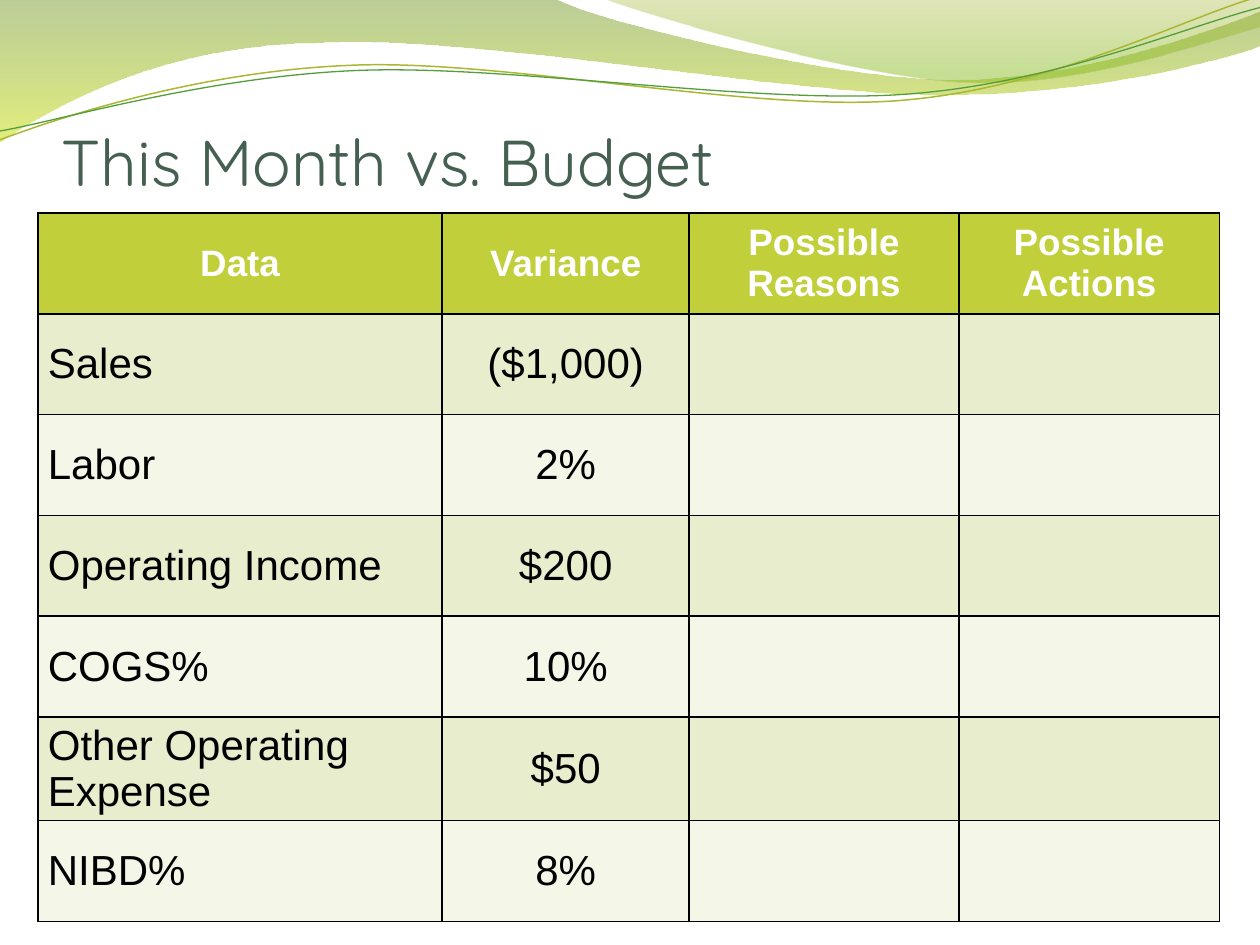
from pptx import Presentation
from pptx.dml.color import RGBColor
from pptx.enum.text import MSO_ANCHOR, MSO_AUTO_SIZE, PP_ALIGN
from pptx.oxml import parse_xml
from pptx.oxml.ns import nsdecls
from pptx.oxml.xmlchemy import OxmlElement
from pptx.util import Inches, Pt

LEFT, CENTER = PP_ALIGN.LEFT, PP_ALIGN.CENTER
MIDDLE, BOTTOM = MSO_ANCHOR.MIDDLE, MSO_ANCHOR.BOTTOM

WHITE = RGBColor(0xFF, 0xFF, 0xFF)
BLACK = RGBColor(0x00, 0x00, 0x00)
TITLE_GREEN = RGBColor(0x45, 0x5F, 0x51)
HEADER_LIME = RGBColor(0xC0, 0xCF, 0x3A)
BANDS = RGBColor(0xE8, 0xED, 0xCE), RGBColor(0xF4, 0xF6, 0xE8)
OLIVE = RGBColor(0x69, 0x92, 0x1C)
YELLOW_GREEN = RGBColor(0xCC, 0xE1, 0x0F)
MOSS = RGBColor(0x9B, 0xAA, 0x1A)
GRASS = RGBColor(0x81, 0xBA, 0x16)
LINE_LIME = RGBColor(0xA9, 0xB7, 0x33)
LINE_GREEN = RGBColor(0x54, 0x9E, 0x39)

TITLE = "This Month vs. Budget"
HEADERS = ["Data", "Variance", "Possible Reasons", "Possible Actions"]
ROWS = [
    ("Sales", "($1,000)"),
    ("Labor", "2%"),
    ("Operating Income", "$200"),
    ("COGS%", "10%"),
    ("Other Operating Expense", "$50"),
    ("NIBD%", "8%"),
]
COLUMN_WIDTHS = [3.21, 1.96, 2.14, 2.07]
ROW_HEIGHT = 0.8

# Outlines in inches: one pair is a straight step, three pairs are a Bezier curve.
# Gradient stops: position, colour, opacity in percent.
BANNERS = [
    ([[(0, -0.01)], [(4.4, -0.01)],
      [(4.75, 0.17), (6.63, 0.63), (7.58, 0.63)],
      [(8.53, 0.63), (9.58, 0.26), (10, 0.09)], [(10.01, 0.36)],
      [(9.83, 0.44), (8.69, 0.76), (7.45, 0.75)],
      [(6.22, 0.75), (3.81, 0.28), (2.57, 0.34)],
      [(1.29, 0.35), (0.45, 0.83), (-0.01, 1.13)], [(0, -0.01)]],
     [(0, OLIVE, 45), (1, YELLOW_GREEN, 55)]),
    ([[(4.79, -0.01)],
      [(5.09, 0.11), (6.82, 0.62), (7.68, 0.65)],
      [(8.55, 0.69), (9.61, 0.32), (10, 0.21)], [(10, 0)], [(4.79, -0.01)]],
     [(0, MOSS, 30), (0.8, GRASS, 45)]),
]
STRANDS = [
    ([[(0, 1.11)],
      [(0.48, 0.93), (1.57, 0.57), (2.76, 0.52)],
      [(3.95, 0.46), (5.92, 0.89), (7.12, 0.8)],
      [(8.33, 0.71), (9.38, 0.15), (9.97, -0.02)]], LINE_LIME, 0.85),
    ([[(0, 1.04)],
      [(0.47, 0.96), (1.63, 0.61), (2.83, 0.56)],
      [(4.02, 0.51), (5.97, 0.83), (7.16, 0.75)],
      [(8.36, 0.67), (9.41, 0.21), (10, 0.06)]], LINE_GREEN, 0.75),
]


def add_outline(page, outline, close):
    """Draw every point as a straight step, then join triples into Bezier curves."""
    points = [(Inches(x), Inches(y)) for step in outline for x, y in step]
    builder = page.shapes.build_freeform(*points[0])
    builder.add_line_segments(points[1:], close=close)
    shape = builder.convert_to_shape()
    shape.shadow.inherit = False
    straight_steps = iter(shape.element.spPr.xpath(".//a:lnTo"))
    for step in outline[1:]:
        parts = [next(straight_steps) for point in step]
        if len(parts) == 3:
            curve = OxmlElement("a:cubicBezTo")
            parts[0].addprevious(curve)
            for part in parts:
                curve.append(part[0])
                part.getparent().remove(part)
    return shape


def add_banner(page, outline, stops):
    shape = add_outline(page, outline, True)
    shape.line.fill.background()
    shape.fill.gradient()
    shape.fill.gradient_angle = 270
    for stop, (position, color, opacity) in zip(shape.fill.gradient_stops, stops):
        stop.position = position
        stop.color.rgb = color
    colors = shape.element.spPr.xpath(".//a:gs/a:srgbClr")
    for element, (position, color, opacity) in zip(colors, stops):
        alpha = OxmlElement("a:alpha")
        alpha.set("val", str(opacity * 1000))
        element.append(alpha)


def add_strand(page, outline, color, width):
    shape = add_outline(page, outline, False)
    shape.fill.background()
    shape.line.color.rgb = color
    shape.line.width = Pt(width)


def style_cell(cell, fill):
    cell.vertical_anchor = MIDDLE
    cell.margin_left = cell.margin_right = Inches(0.08)
    cell.margin_top = cell.margin_bottom = Inches(0.04)
    properties = cell._tc.get_or_add_tcPr()
    for side in ("lnL", "lnR", "lnT", "lnB"):
        properties.append(parse_xml(
            f'<a:{side} {nsdecls("a")} w="{Pt(1)}"><a:solidFill>'
            f'<a:srgbClr val="{BLACK}"/></a:solidFill></a:{side}>'))
    cell.fill.solid()
    cell.fill.fore_color.rgb = fill


def write_cell(cell, text, align, size, color, bold):
    cell.text = text
    para = cell.text_frame.paragraphs[0]
    para.alignment = align
    para.font.name = "Arial"
    para.font.size = Pt(size)
    para.font.bold = bold
    para.font.color.rgb = color


def place_title(page):
    title = page.shapes.title
    title.left, title.top, title.width, title.height = map(Inches, (0.49, 0.64, 9, 0.94))
    frame = title.text_frame
    frame.text = TITLE
    frame.auto_size = MSO_AUTO_SIZE.NONE
    frame.vertical_anchor = BOTTOM
    frame.margin_left = frame.margin_right = frame.margin_bottom = 0
    frame.margin_top = Inches(0.05)
    para = frame.paragraphs[0]
    para.alignment = LEFT
    para.font.name = "Quicksand"
    para.font.size = Pt(37)
    para.font.color.rgb = TITLE_GREEN
    title.element.getparent().append(title.element)  # in front of the waves


def add_budget_table(page):
    row_count = len(ROWS) + 1
    table = page.shapes.add_table(
        row_count, len(HEADERS), Inches(0.3), Inches(1.69),
        Inches(sum(COLUMN_WIDTHS)), Inches(ROW_HEIGHT * row_count)).table
    for column, width in zip(table.columns, COLUMN_WIDTHS):
        column.width = Inches(width)
    for r in range(row_count):
        for c in range(len(HEADERS)):
            style_cell(table.cell(r, c), BANDS[(r - 1) % 2] if r else HEADER_LIME)
    for c, header in enumerate(HEADERS):
        write_cell(table.cell(0, c), header, CENTER, 21, WHITE, True)
    for r, row in enumerate(ROWS, 1):
        for c, (text, align) in enumerate(zip(row, (LEFT, CENTER))):
            write_cell(table.cell(r, c), text, align, 24, BLACK, False)


def main():
    deck = Presentation()
    deck.slide_width, deck.slide_height = Inches(10), Inches(7.5)
    page = deck.slides.add_slide(deck.slide_layouts[5])
    for banner in BANNERS:
        add_banner(page, *banner)
    for strand in STRANDS:
        add_strand(page, *strand)
    place_title(page)
    add_budget_table(page)
    deck.save("out.pptx")


if __name__ == "__main__":
    main()
